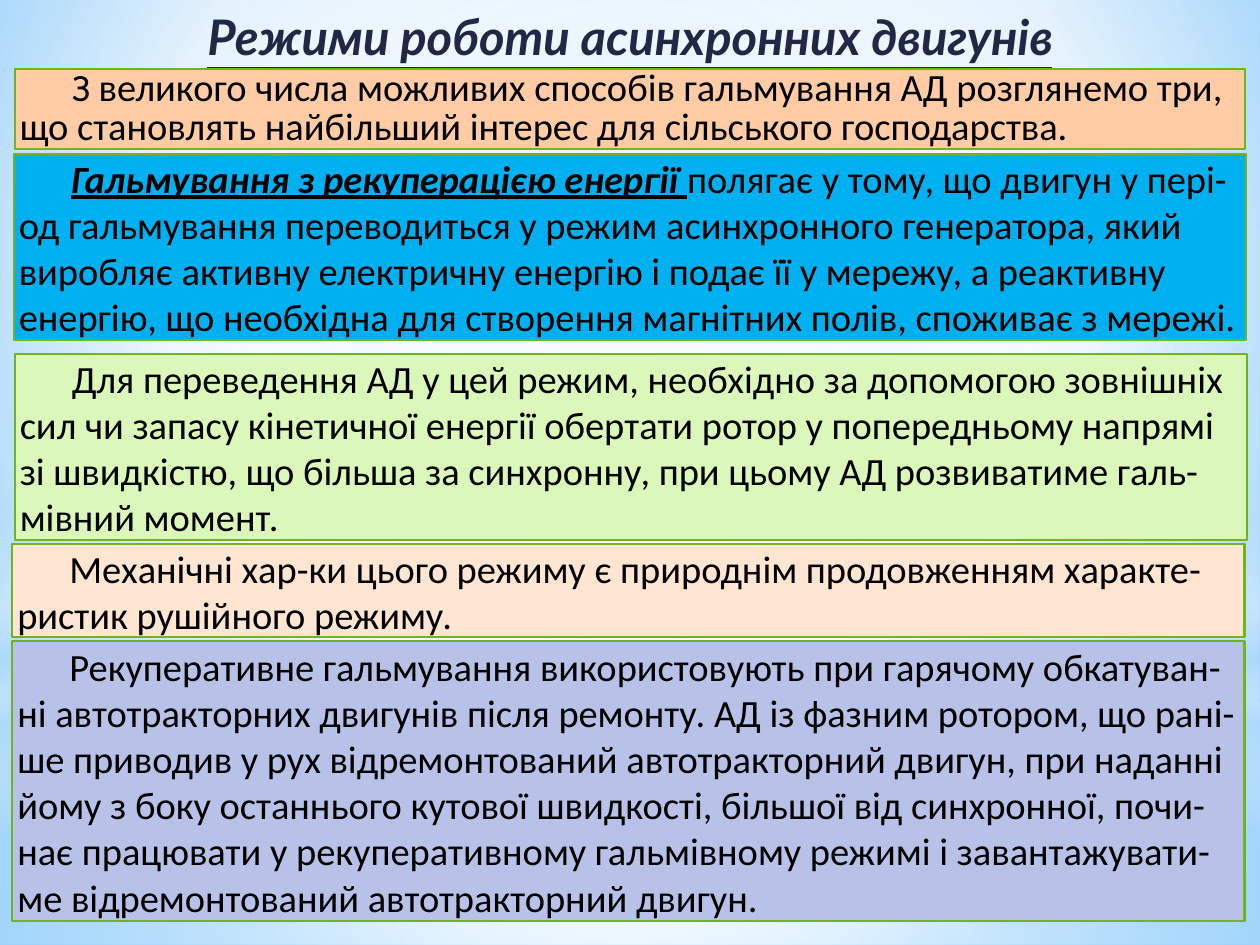
from lxml.etree import SubElement
from pptx import Presentation
from pptx.dml.color import RGBColor
from pptx.enum.shapes import MSO_SHAPE
from pptx.enum.text import MSO_ANCHOR, MSO_AUTO_SIZE, PP_ALIGN
from pptx.oxml.ns import qn
from pptx.util import Cm, Pt

WHITE = RGBColor(0xFF, 0xFF, 0xFF)
SKY = RGBColor(0xB4, 0xDC, 0xFA)
LIGHT_BLUE = RGBColor(0x9E, 0xD5, 0xFF)
DEEP_BLUE = RGBColor(0x5B, 0xB9, 0xFF)
NAVY = RGBColor(0x21, 0x27, 0x45)
BLACK = RGBColor(0, 0, 0)
GREEN = RGBColor(0x72, 0xB4, 0x1D)
PEACH = RGBColor(0xFF, 0xCC, 0xA6)
CYAN = RGBColor(0x00, 0xB0, 0xF0)
LIME = RGBColor(0xDC, 0xF7, 0xBA)
CREAM = RGBColor(0xFF, 0xE6, 0xD3)
LAVENDER = RGBColor(0xB8, 0xC2, 0xE9)

CENTRE = (50, 50, 50, 50)
PAGE_WIDTH, PAGE_HEIGHT = 25.4, 19.05

GLOWS = [
    (MSO_SHAPE.RECTANGLE, 14.17, 4.88,
     [(0, WHITE, 91), (37, WHITE, 76), (100, SKY, 79)], CENTRE),
    (MSO_SHAPE.RECTANGLE, 0, 14.17,
     [(0, WHITE, 89), (48, WHITE, 62), (100, SKY, 79)], CENTRE),
    (MSO_SHAPE.RECTANGLE, 10.46, 6.35,
     [(0, WHITE, 0), (29, WHITE, 30), (45, SKY, 40), (55, WHITE, 26),
      (65, SKY, 60), (100, WHITE, 0)], None),
    (MSO_SHAPE.OVAL, 4.45, 14.17, [(0, WHITE, 100), (56, WHITE, 0)], CENTRE),
]

PANELS = [
    ((0.3, 1.4, 24.8, 1.6), PEACH, 0.85, [
        ("З великого числа можливих способів гальмування АД розглянемо три, "
         "що становлять найбільший інтерес для сільського господарства.", False)]),
    ((0.28, 3.1, 24.84, 3.76), CYAN, 1, [
        ("Гальмування з рекуперацією енергії ", True),
        ("полягає у тому, що двигун у пері-од гальмування переводиться у режим "
         "асинхронного генератора, який виробляє активну електричну енергію і "
         "подає її у мережу, а реактивну енергію, що необхідна для створення "
         "магнітних полів, споживає з мережі.", False)]),
    ((0.3, 7.13, 24.84, 3.76), LIME, 1, [
        ("Для переведення АД у цей режим, необхідно за допомогою зовнішніх сил "
         "чи запасу кінетичної енергії обертати ротор у попередньому напрямі зі "
         "швидкістю, що більша за синхронну, при цьому АД розвиватиме "
         "галь-мівний момент.", False)]),
    ((0.25, 10.97, 24.84, 1.88), CREAM, 1, [
        ("Механічні хар-ки цього режиму є природнім продовженням "
         "характе-ристик рушійного режиму.", False)]),
    ((0.25, 12.93, 24.84, 5.64), LAVENDER, 1, [
        ("Рекуперативне гальмування використовують при гарячому обкатуван-ні "
         "автотракторних двигунів після ремонту. АД із фазним ротором, що "
         "рані-ше приводив у рух відремонтований автотракторний двигун, при "
         "наданні йому з боку останнього кутової швидкості, більшої від "
         "синхронної, почи-нає працювати у рекуперативному гальмівному режимі і "
         "завантажувати-ме відремонтований автотракторний двигун.", False)]),
]


def paint_gradient(fill, element, stops, focus):
    """Fill with (position, colour, opacity) stops, circular around focus or vertical."""
    fill.gradient()
    gradient = next(element.iter(qn("a:gradFill")))
    for child in list(gradient):
        gradient.remove(child)
    stop_list = SubElement(gradient, qn("a:gsLst"))
    for position, colour, opacity in stops:
        stop = SubElement(stop_list, qn("a:gs"), pos=str(position * 1000))
        tone = SubElement(stop, qn("a:srgbClr"), val=str(colour))
        if opacity < 100:
            SubElement(tone, qn("a:alpha"), val=str(opacity * 1000))
    if focus:
        circle = SubElement(gradient, qn("a:path"), path="circle")
        sides = {side: str(share * 1000) for side, share in zip("ltrb", focus)}
        SubElement(circle, qn("a:fillToRect"), **sides)
    else:
        SubElement(gradient, qn("a:lin"), ang="5400000", scaled="0")


def add_backdrop(page):
    """Paint the page gradient and the soft full-width glows over it."""
    stops = [(0, LIGHT_BLUE, 100), (60, WHITE, 100), (100, DEEP_BLUE, 100)]
    paint_gradient(page.background.fill, page.element, stops, (20, 10, 20, 60))
    for kind, top, height, stops, focus in GLOWS:
        glow = page.shapes.add_shape(kind, 0, Cm(top), Cm(PAGE_WIDTH), Cm(height))
        glow.shadow.inherit = False
        glow.line.fill.background()
        paint_gradient(glow.fill, glow.element, stops, focus)


def add_span(para, text, font="Calibri", size=22, colour=BLACK, emphasis=False):
    """Append formatted text; emphasis means bold, italic and underlined."""
    span = para.add_run()
    span.text = text
    span.font.name, span.font.size = font, Pt(size)
    span.font.color.rgb = colour
    span.font.bold = span.font.italic = span.font.underline = emphasis


def set_frame(frame, side, end):
    """Set wrapping, anchor and margins of a text frame."""
    frame.word_wrap = True
    frame.auto_size = MSO_AUTO_SIZE.NONE
    frame.vertical_anchor = MSO_ANCHOR.MIDDLE
    frame.margin_left = frame.margin_right = Cm(side)
    frame.margin_top = frame.margin_bottom = Cm(end)


def add_title(page, box, text):
    """Place the title placeholder in the box, in front of the backdrop."""
    title = page.shapes.title
    title.left, title.top, title.width, title.height = map(Cm, box)
    title.element.getparent().append(title.element)
    set_frame(title.text_frame, 0, 0.13)
    para = title.text_frame.paragraphs[0]
    para.alignment = PP_ALIGN.CENTER
    add_span(para, text, font="Lato", size=28, colour=NAVY, emphasis=True)


def add_panel(page, box, colour, spacing, spans):
    """Add a bordered panel holding one paragraph with an indented first line."""
    panel = page.shapes.add_shape(MSO_SHAPE.RECTANGLE, *map(Cm, box))
    panel.shadow.inherit = False
    panel.fill.solid()
    panel.fill.fore_color.rgb = colour
    panel.line.color.rgb = GREEN
    panel.line.width = Pt(1.25)
    set_frame(panel.text_frame, 0.1, 0)
    para = panel.text_frame.paragraphs[0]
    para.alignment = PP_ALIGN.LEFT
    para.line_spacing = spacing
    para._p.get_or_add_pPr().set("indent", str(Cm(1.05)))
    for text, emphasis in spans:
        add_span(para, text, emphasis=emphasis)


def main():
    """Build and save the deck."""
    deck = Presentation()
    deck.slide_width, deck.slide_height = Cm(PAGE_WIDTH), Cm(PAGE_HEIGHT)
    page = deck.slides.add_slide(deck.slide_layouts[5])
    add_backdrop(page)
    add_title(page, (0.3, 0, 24.8, 1.45), "Режими роботи асинхронних двигунів")
    for panel in PANELS:
        add_panel(page, *panel)
    deck.save("out.pptx")


if __name__ == "__main__":
    main()
